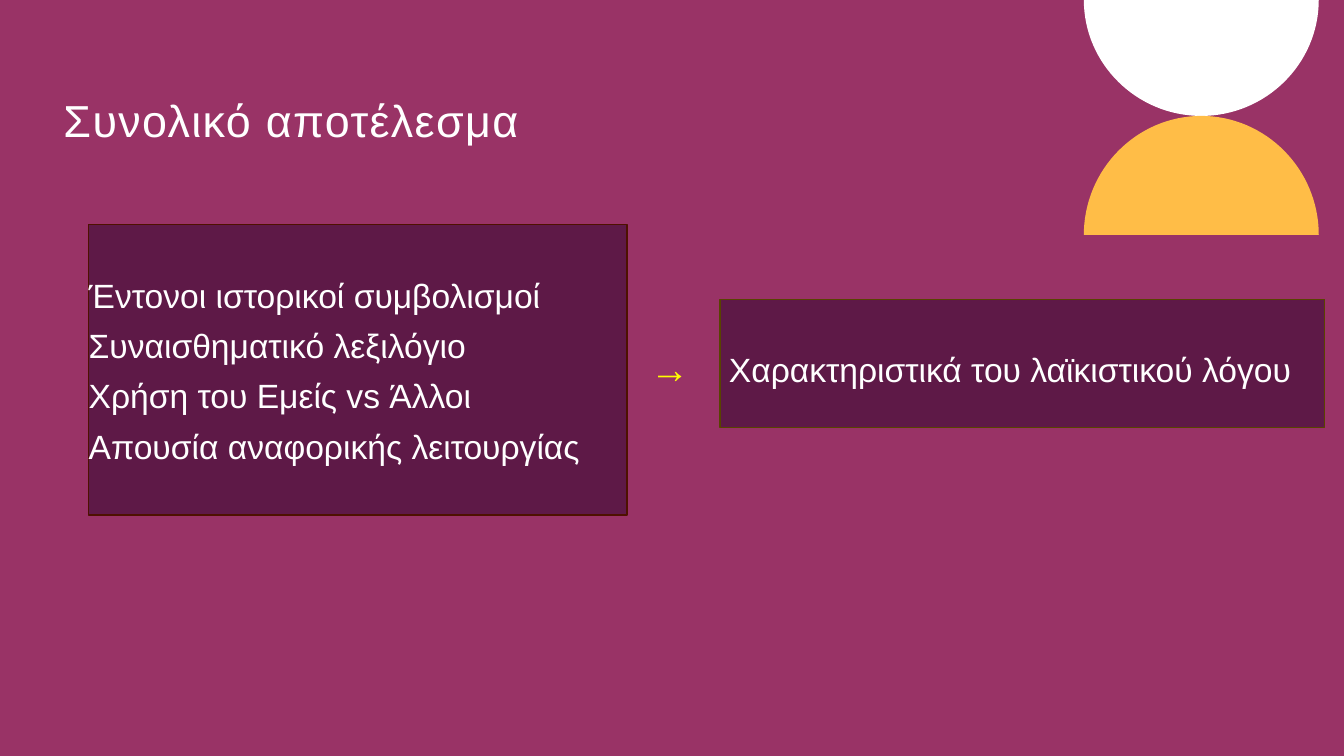
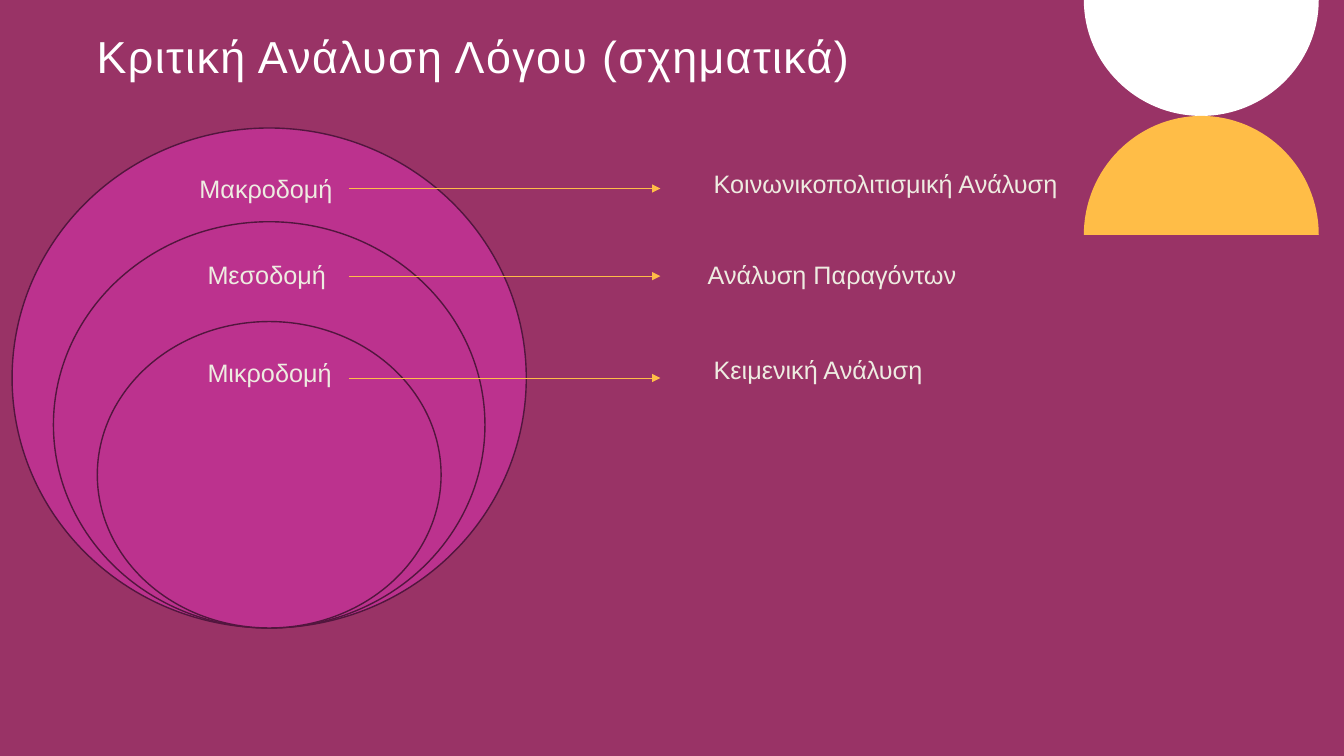
"""Builds two slides on discourse analysis: overall result and nested levels."""
from lxml.etree import SubElement
from pptx import Presentation
from pptx.dml.color import RGBColor
from pptx.enum.shapes import MSO_CONNECTOR, MSO_SHAPE
from pptx.enum.text import MSO_ANCHOR, PP_ALIGN
from pptx.oxml.ns import qn
from pptx.util import Pt

PX = 9144
SLIDE_SIZE = (1333, 750)

THEME = {
    "font": "Arial",
    "background": "993366",
    "white": "FFFFFF",
    "gold": "FFBD47",
    "panel": "5E1947",
    "ring": "BC328E",
    "ring_line": "52163E",
    "title": {"size": 32, "color": "FFFFFF", "line_spacing": 0.9, "tracking": 100},
    "panel_text": {"size": 24, "color": "FFFFFF", "line_spacing": 0.9, "space": 10},
    "label": {"size": 18, "color": "EEECE1"},
    "arrow": {"size": 28, "color": "FFFF00", "bold": True},
}

RESULT_TITLE = ("Συνολικό αποτέλεσμα", 63, 98)
PANELS = [
    {"area": (88, 223, 534, 288), "line": "4E1100", "inset": (0, 54),
     "lines": ["Έντονοι ιστορικοί συμβολισμοί", "Συναισθηματικό λεξιλόγιο",
               "Χρήση του Εμείς vs Άλλοι", "Απουσία αναφορικής λειτουργίας"]},
    {"area": (714, 297, 600, 127), "line": "594300", "inset": (9, 54),
     "lines": ["Χαρακτηριστικά του λαϊκιστικού λόγου"]},
]
RESULT_ARROW = ("→", (635, 337, 67, 57))

LEVELS_TITLE = ("Κριτική Ανάλυση Λόγου (σχηματικά)", 96, 35)
RING_CENTRE, RING_BOTTOM = 267, 623
RINGS = [(510, 496), (428, 403), (341, 304)]
LEVELS = [
    {"level": ("Μακροδομή", 188, 167), "arrow_y": 187,
     "analysis": ("Κοινωνικοπολιτισμική Ανάλυση", 698, 162)},
    {"level": ("Μεσοδομή", 196, 252), "arrow_y": 274,
     "analysis": ("Ανάλυση Παραγόντων", 692, 252)},
    {"level": ("Μικροδομή", 196, 350), "arrow_y": 375,
     "analysis": ("Κειμενική Ανάλυση", 698, 347)},
]
ARROW_START, ARROW_END = 346, 655
TITLE_SIZE, LABEL_SIZE = (1094, 127), (692, 40)
LABEL_INSET = (10, 5)

DOME_LEFT, DOME_WIDTH = 1075, 233
DOMES = [(0, 115, "white"), (233, 115, "gold")]
CURVE = 0.55


def px(*lengths):
    return [round(length * PX) for length in lengths]


def paint(shape, fill, line=None):
    shape.shadow.inherit = False
    shape.fill.solid()
    shape.fill.fore_color.rgb = RGBColor.from_string(fill)
    if line:
        shape.line.color.rgb = RGBColor.from_string(line)
        shape.line.width = Pt(1)
    else:
        shape.line.fill.background()


def write(shape, lines, style, inset=(0, 0)):
    frame = shape.text_frame
    left, top = px(*inset)
    frame_format = {"word_wrap": True, "vertical_anchor": MSO_ANCHOR.TOP,
                    "margin_left": left, "margin_right": 0,
                    "margin_top": top, "margin_bottom": 0}
    for name, value in frame_format.items():
        setattr(frame, name, value)
    for index, text in enumerate(lines):
        para = frame.paragraphs[0] if index == 0 else frame.add_paragraph()
        para.alignment = PP_ALIGN.LEFT
        para.line_spacing = style.get("line_spacing", 1.0)
        if index:
            para.space_before = Pt(style.get("space", 0))
        span = para.add_run()
        span.text = text
        font_format = {"name": THEME["font"], "size": Pt(style["size"]),
                       "bold": style.get("bold", False)}
        for name, value in font_format.items():
            setattr(span.font, name, value)
        span.font.color.rgb = RGBColor.from_string(style["color"])
        if "tracking" in style:
            span.font._element.set("spc", str(style["tracking"]))


def add_text(page, text, area, style, inset=(0, 0)):
    box = page.shapes.add_textbox(*px(*area))
    write(box, [text], style, inset)


def add_dome(page, base, apex, color):
    radius = DOME_WIDTH / 2
    centre, right = DOME_LEFT + radius, DOME_LEFT + DOME_WIDTH
    shoulder = base + CURVE * (apex - base)
    reach = CURVE * radius
    curves = [
        [(right, shoulder), (centre + reach, apex), (centre, apex)],
        [(centre - reach, apex), (DOME_LEFT, shoulder), (DOME_LEFT, base)],
    ]
    outline = page.shapes.build_freeform(*px(right, base))
    outline.add_line_segments([px(*curve[-1]) for curve in curves], close=True)
    dome = outline.convert_to_shape()
    for segment, curve in zip(list(dome._element.iter(qn("a:lnTo"))), curves):
        segment.tag = qn("a:cubicBezTo")
        segment.remove(segment[0])
        for point in curve:
            x, y = px(*point)
            SubElement(segment, qn("a:pt"), x=str(x - dome.left), y=str(y - dome.top))
    paint(dome, THEME[color])


def add_arrow(page, y):
    arrow = page.shapes.add_connector(
        MSO_CONNECTOR.STRAIGHT, *px(ARROW_START, y, ARROW_END, y))
    arrow.line.color.rgb = RGBColor.from_string(THEME["gold"])
    arrow.line.width = Pt(0.5)
    SubElement(arrow.line._get_or_add_ln(), qn("a:tailEnd"), type="triangle")
    SubElement(arrow._element.spPr, qn("a:effectLst"))


def add_page(deck, title):
    page = deck.slides.add_slide(deck.slide_layouts[6])
    page.background.fill.solid()
    page.background.fill.fore_color.rgb = RGBColor.from_string(THEME["background"])
    for dome in DOMES:
        add_dome(page, *dome)
    text, left, top = title
    add_text(page, text, (left, top, *TITLE_SIZE), THEME["title"])
    return page


def build_result(deck):
    page = add_page(deck, RESULT_TITLE)
    for panel in PANELS:
        box = page.shapes.add_shape(MSO_SHAPE.RECTANGLE, *px(*panel["area"]))
        paint(box, THEME["panel"], panel["line"])
        write(box, panel["lines"], THEME["panel_text"], panel["inset"])
    text, area = RESULT_ARROW
    add_text(page, text, area, THEME["arrow"], LABEL_INSET)


def build_levels(deck):
    page = add_page(deck, LEVELS_TITLE)
    for width, height in RINGS:
        area = (RING_CENTRE - width / 2, RING_BOTTOM - height, width, height)
        ring = page.shapes.add_shape(MSO_SHAPE.OVAL, *px(*area))
        paint(ring, THEME["ring"], THEME["ring_line"])
    for row in LEVELS:
        for text, left, top in (row["level"], row["analysis"]):
            add_text(page, text, (left, top, *LABEL_SIZE), THEME["label"], LABEL_INSET)
        add_arrow(page, row["arrow_y"])


def main():
    deck = Presentation()
    deck.slide_width, deck.slide_height = px(*SLIDE_SIZE)
    build_result(deck)
    build_levels(deck)
    deck.save("out.pptx")


if __name__ == "__main__":
    main()
